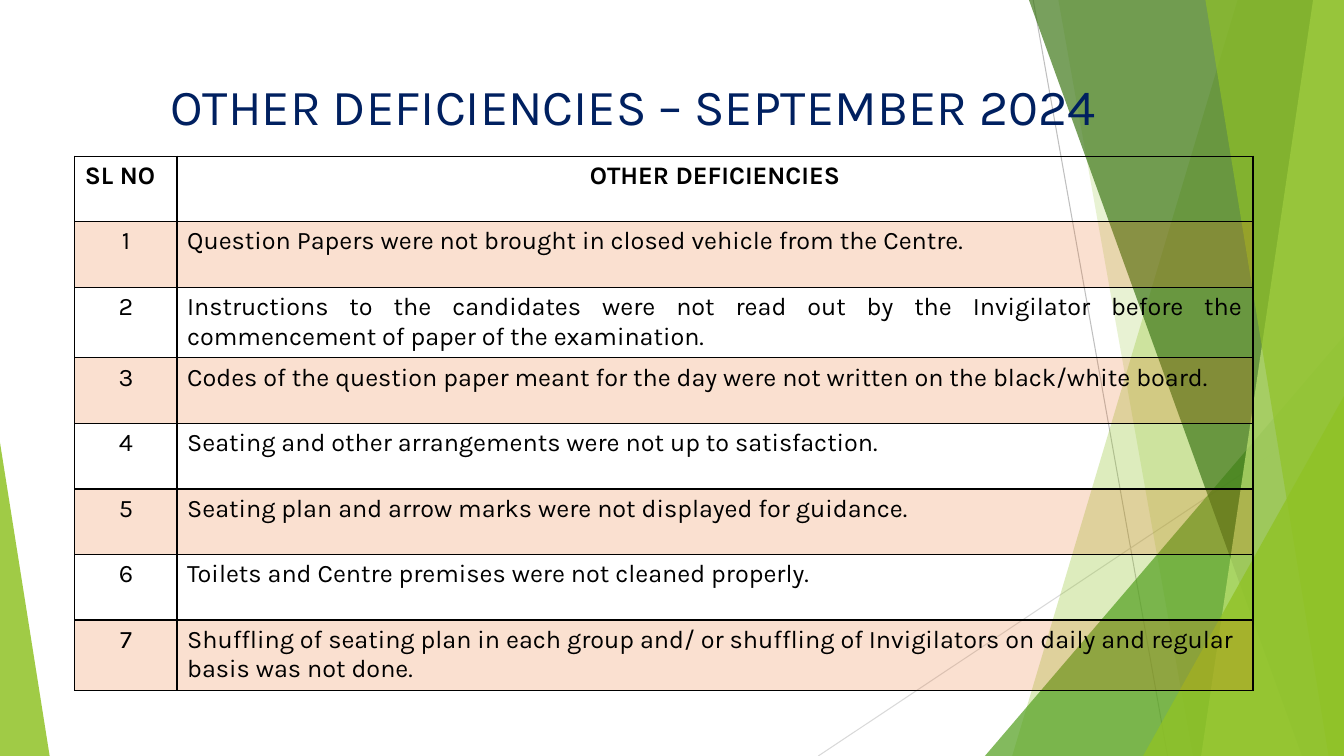
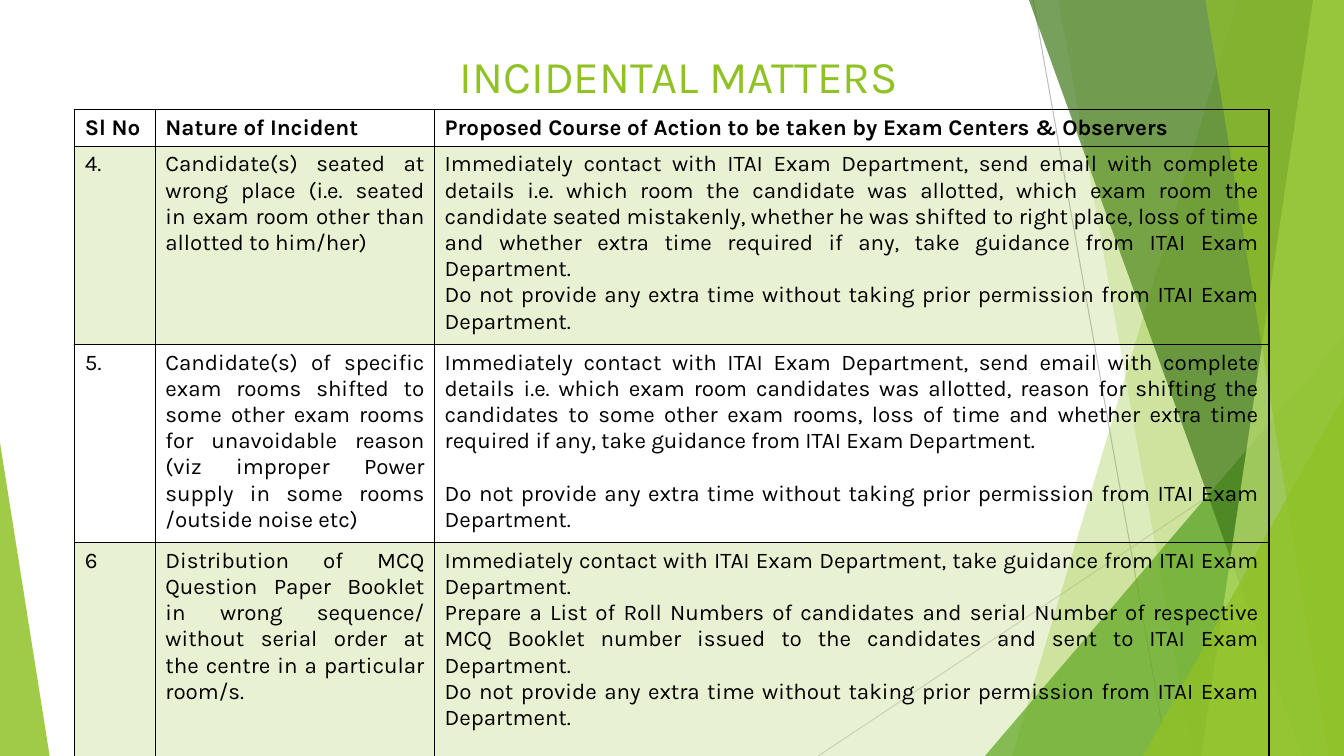
import pptx
import pptx.dml.color
import pptx.enum.shapes
import pptx.enum.text
import pptx.oxml
import pptx.oxml.ns
import pptx.util

Pt = pptx.util.Pt
SHAPE = pptx.enum.shapes.MSO_SHAPE
ALIGN = pptx.enum.text.PP_ALIGN
ANCHOR = pptx.enum.text.MSO_ANCHOR

# Shared style
WIDTH, HEIGHT = 960, 540
FONT = "Karla"
GREEN, NAVY, ORANGE, BLACK = "90C226", "002060", "E76618", "000000"
BAND_ALPHA = 20
ALIGNS = {"l": ALIGN.LEFT, "c": ALIGN.CENTER, "j": ALIGN.JUSTIFY}

# Backdrop, back to front
LINES = [  # start, end, colour
    ((738, 0), (834, 540), "BFBFBF"),
    ((960, 290), (584.5, 540), "D9D9D9"),
]
FACETS = [
    # bands reaching the right edge: top x, bottom x
    ("band", (884, 723), GREEN, 30),
    ("band", (756, 852), GREEN, 20),
    # triangles: left, top, width, height, apex position
    ("triangle", (703.5, 240, 256.5, 300, 1), "54A021", 72),
    ("band", (735, 930), "3F7819", 70),
    ("band", (938, 858), "C0E474", 70),
    ("band", (861, 949), GREEN, 65),
    ("triangle", (816.5, 283, 143.5, 257, 1), GREEN, 80),
    ("triangle", (0, 316, 35.5, 224, 0), GREEN, 85),
]

# Content: each row has its column alignments, then its cells.
# A cell is a text or a list of (paragraph, space before).
NO_EXTRA_TIME = ("Do not provide any extra time without taking prior permission "
                 "from ITAI Exam Department.")
SLIDES = [
    dict(
        title="OTHER DEFICIENCIES – SEPTEMBER 2024",
        title_box=(53.5, 48, 798, 54), title_size=36, title_color=NAVY,
        title_anchor=ANCHOR.MIDDLE,
        top=111.6, size=18, band=ORANGE,
        columns=[73, 768.5], heights=[46.8] * 8,
        rows=[
            ("lc", "SL NO", "OTHER DEFICIENCIES"),
            ("cl", "1", "Question Papers were not brought in closed vehicle from the Centre."),
            ("cj", "2", "Instructions to the candidates were not read out by the Invigilator "
                        "before the commencement of paper of the examination."),
            ("cl", "3", "Codes of the question paper meant for the day were not written on "
                        "the black/white board."),
            ("cl", "4", "Seating and other arrangements were not up to satisfaction."),
            ("cl", "5", "Seating plan and arrow marks were not displayed for guidance."),
            ("cl", "6", "Toilets and Centre premises were not cleaned properly."),
            ("cl", "7", "Shuffling of seating plan in each group and/ or shuffling of "
                        "Invigilators on daily and regular basis was not done."),
        ],
    ),
    dict(
        title="INCIDENTAL MATTERS",
        title_box=(239, 29.5, 492, 47.5), title_size=32.4, title_color=GREEN,
        title_anchor=ANCHOR.BOTTOM,
        top=78.2, size=16, band=GREEN,
        columns=[57.5, 199.5, 596], heights=[25.8, 138.2, 138.2, 157],
        rows=[
            ("lll", "Sl No", "Nature of Incident",
             "Proposed Course of Action to be taken by Exam Centers & Observers"),
            ("ljj", "4.",
             "Candidate(s) seated at wrong place (i.e. seated in exam room other than "
             "allotted to him/her)",
             [("Immediately contact with ITAI Exam Department, send email with complete "
               "details i.e. which room the candidate was allotted, which exam room the "
               "candidate seated mistakenly, whether he was shifted to right place, loss "
               "of time and whether extra time required if any, take guidance from ITAI "
               "Exam Department.", 0),
              (NO_EXTRA_TIME, 0)]),
            ("ljj", "5.",
             "Candidate(s) of specific exam rooms shifted to some other exam rooms for "
             "unavoidable reason (viz improper Power supply in some rooms /outside noise etc)",
             [("Immediately contact with ITAI Exam Department, send email with complete "
               "details i.e. which exam room candidates was allotted, reason for shifting "
               "the candidates to some other exam rooms, loss of time and whether extra "
               "time required if any, take guidance from ITAI Exam Department.", 0),
              (NO_EXTRA_TIME, 18.7)]),
            ("ljj", "6",
             "Distribution of MCQ Question Paper Booklet in wrong sequence/ without serial "
             "order at the centre in a particular room/s.",
             [("Immediately contact with ITAI Exam Department, take guidance from ITAI "
               "Exam Department.", 0),
              ("Prepare a List of Roll Numbers of candidates and serial Number of "
               "respective MCQ Booklet number issued to the candidates and sent to ITAI "
               "Exam Department.", 0),
              (NO_EXTRA_TIME, 0)]),
        ],
    ),
]


def rgb(value):
    return pptx.dml.color.RGBColor.from_string(value)


def fill_solid(fill, parent, color, alpha):
    """Fill with a colour at a given opacity in percent."""
    fill.solid()
    fill.fore_color.rgb = rgb(color)
    clr = parent.find(pptx.oxml.ns.qn("a:solidFill"))[0]
    clr.append(pptx.oxml.parse_xml(
        f'<a:alpha {pptx.oxml.ns.nsdecls("a")} val="{alpha * 1000}"/>'))


def style_paragraph(p, text, size, color, align, bold=False):
    p.text = text
    p.alignment = align
    p.font.name, p.font.size, p.font.bold = FONT, Pt(size), bold
    p.font.color.rgb = rgb(color)


def add_backdrop(s):
    for start, end, color in LINES:
        line = s.shapes.add_connector(
            pptx.enum.shapes.MSO_CONNECTOR.STRAIGHT, *map(Pt, start + end))
        line.line.color.rgb = rgb(color)
        line.line.width = Pt(0.75)
        line._element.spPr.append(pptx.oxml.parse_xml(
            f'<a:effectLst {pptx.oxml.ns.nsdecls("a")}/>'))
    for kind, geometry, color, alpha in FACETS:
        if kind == "band":
            top_x, bottom_x = geometry
            outline = s.shapes.build_freeform(Pt(top_x), 0)
            outline.add_line_segments([(Pt(x), Pt(y)) for x, y in (
                (WIDTH, 0), (WIDTH, HEIGHT), (bottom_x, HEIGHT))])
            sp = outline.convert_to_shape()
        else:
            *box, apex = geometry
            sp = s.shapes.add_shape(SHAPE.ISOSCELES_TRIANGLE, *map(Pt, box))
            sp.adjustments[0] = apex
        sp.shadow.inherit = False
        sp.line.fill.background()
        fill_solid(sp.fill, sp._element.spPr, color, alpha)


def add_title(s, data):
    tf = s.shapes.add_textbox(*map(Pt, data["title_box"])).text_frame
    tf.word_wrap = True
    tf.vertical_anchor = data["title_anchor"]
    style_paragraph(tf.paragraphs[0], data["title"], data["title_size"],
                    data["title_color"], ALIGN.CENTER)


def add_borders(tc_pr):
    for i, side in enumerate("LRTB"):
        tc_pr.insert(i, pptx.oxml.parse_xml(
            f'<a:ln{side} {pptx.oxml.ns.nsdecls("a")} w="{Pt(1)}"><a:solidFill>'
            f'<a:srgbClr val="{BLACK}"/></a:solidFill></a:ln{side}>'))


def add_grid(s, data):
    columns, heights, rows = data["columns"], data["heights"], data["rows"]
    table = s.shapes.add_table(
        len(rows), len(columns), Pt(53.5), Pt(data["top"]),
        Pt(sum(columns)), Pt(sum(heights))).table
    table.horz_banding = table.first_row = False
    for column, width in zip(table.columns, columns):
        column.width = Pt(width)
    for i, (aligns, *cells) in enumerate(rows):
        table.rows[i].height = Pt(heights[i])
        for j, content in enumerate(cells):
            cell = table.cell(i, j)
            tc_pr = cell._tc.get_or_add_tcPr()
            if i % 2:
                fill_solid(cell.fill, tc_pr, data["band"], BAND_ALPHA)
            else:
                cell.fill.background()
            add_borders(tc_pr)
            tf = cell.text_frame
            paragraphs = [(content, 0)] if isinstance(content, str) else content
            for k, (text, space) in enumerate(paragraphs):
                p = tf.add_paragraph() if k else tf.paragraphs[0]
                style_paragraph(p, text, data["size"], BLACK,
                                ALIGNS[aligns[j]], bold=i == 0)
                p.space_before = Pt(space)


def main():
    prs = pptx.Presentation()
    prs.slide_width, prs.slide_height = Pt(WIDTH), Pt(HEIGHT)
    for data in SLIDES:
        s = prs.slides.add_slide(prs.slide_layouts[6])
        add_backdrop(s)
        add_title(s, data)
        add_grid(s, data)
    prs.save("out.pptx")


if __name__ == "__main__":
    main()
